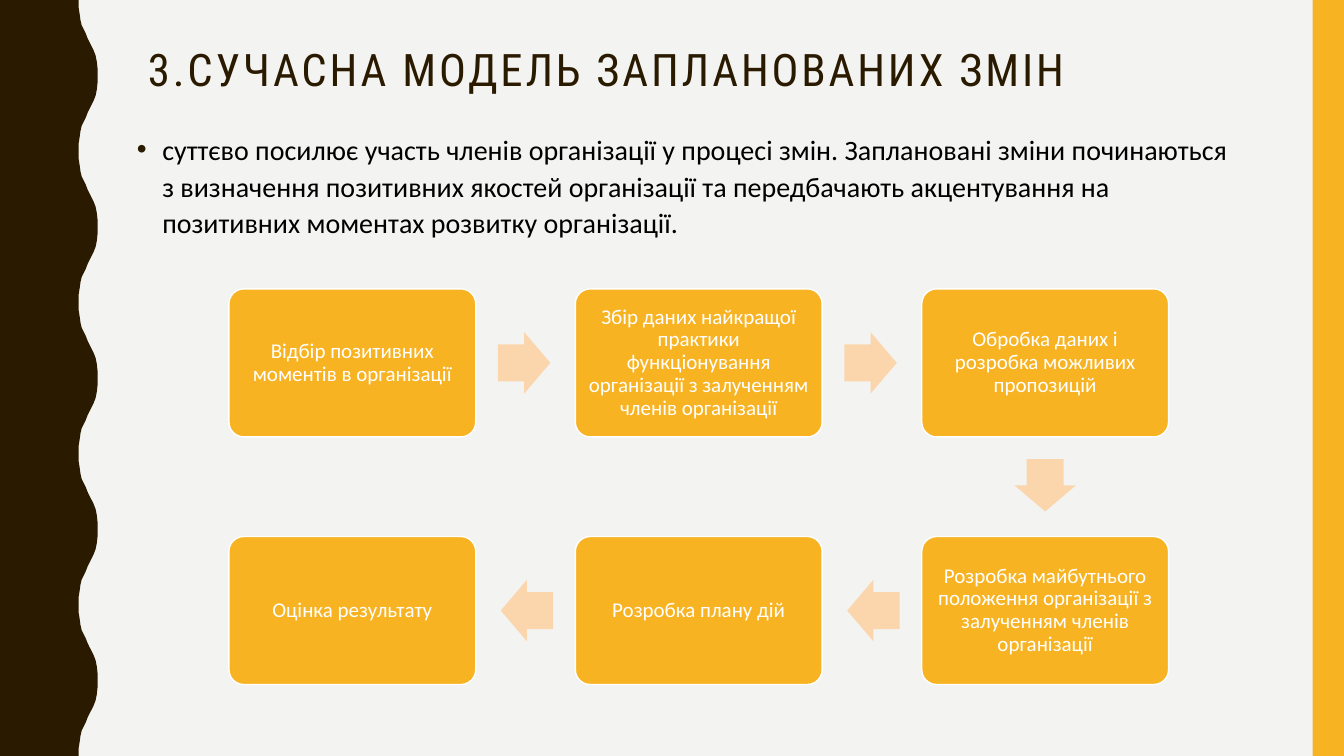
from dataclasses import dataclass

from lxml.etree import SubElement
from pptx import Presentation
from pptx.dml.color import RGBColor
from pptx.enum.shapes import MSO_SHAPE
from pptx.enum.text import MSO_ANCHOR, PP_ALIGN
from pptx.oxml.ns import qn
from pptx.util import Cm, Pt


@dataclass(frozen=True)
class Theme:
    background: str = "F3F3F2"
    dark: str = "2A1A00"
    accent: str = "F8B323"
    arrow: str = "FBD6AC"
    white: str = "FFFFFF"
    black: str = "000000"
    title_font: str = "Roboto Condensed"
    body_font: str = "Calibri"
    title_size: int = 32
    body_size: int = 20
    step_size: int = 15


SLIDE_WIDTH, SLIDE_HEIGHT = 33.87, 19.05
STEP_WIDTH, STEP_HEIGHT = 6.22, 3.73
STEP_LEFT, STEP_TOP = 5.77, 7.28
COLUMN_PITCH, ROW_PITCH = 8.73, 6.24
ARROW_LENGTH, ARROW_WIDTH, ARROW_GAP = 1.32, 1.55, 0.56
WAVE_PERIOD, WAVE_COUNT = 3.81, 5
HALF_WAVE = [
    (1.98, 0), (1.98, 0.18), (2.01, 0.36), (2.03, 0.51), (2.06, 0.64),
    (2.11, 0.74), (2.16, 0.84), (2.21, 0.97), (2.26, 1.07), (2.31, 1.17),
    (2.36, 1.27), (2.41, 1.4), (2.44, 1.55), (2.46, 1.73), (2.46, 1.9),
]

TITLE = "3.СУЧАСНА МОДЕЛЬ ЗАПЛАНОВАНИХ ЗМІН"
BODY = (
    "суттєво посилює участь членів організації у процесі змін. "
    "Заплановані зміни починаються з визначення позитивних якостей організації "
    "та передбачають акцентування на позитивних моментах розвитку організації."
)
STEPS = [
    ("Відбір позитивних моментів в організації", 0, 0),
    ("Збір даних найкращої практики функціонування організації "
     "з залученням членів організації", 1, 0),
    ("Обробка даних і розробка можливих пропозицій", 2, 0),
    ("Розробка майбутнього положення організації "
     "з залученням членів організації", 2, 1),
    ("Розробка плану дій", 1, 1),
    ("Оцінка результату", 0, 1),
]


class SlideBuilder:
    def __init__(self, slide, theme):
        self.slide = slide
        self.theme = theme
        self.paint(slide.background.fill, theme.background)

    def paint(self, fill, color):
        fill.solid()
        fill.fore_color.rgb = RGBColor.from_string(color)

    def finish(self, shape, color, line=None):
        shape.shadow.inherit = False
        self.paint(shape.fill, color)
        if line:
            self.paint(shape.line.fill, line)
            shape.line.width = Pt(1)
        else:
            shape.line.fill.background()
        return shape

    def shape(self, kind, left, top, width, height, color, line=None):
        shape = self.slide.shapes.add_shape(
            kind, Cm(left), Cm(top), Cm(width), Cm(height))
        return self.finish(shape, color, line)

    def wave(self):
        mirrored = [(x, WAVE_PERIOD - y) for x, y in reversed(HALF_WAVE[1:-1])]
        edge = [
            (Cm(x), Cm(y + index * WAVE_PERIOD))
            for index in range(WAVE_COUNT)
            for x, y in HALF_WAVE + mirrored
        ]
        edge += [(Cm(HALF_WAVE[0][0]), Cm(SLIDE_HEIGHT)), (0, Cm(SLIDE_HEIGHT))]
        builder = self.slide.shapes.build_freeform(0, 0)
        builder.add_line_segments(edge, close=True)
        self.finish(builder.convert_to_shape(), self.theme.dark)

    def add_text(self, frame, text, font, size, color, line_spacing):
        frame.word_wrap = True
        para = frame.paragraphs[0]
        para.line_spacing = line_spacing
        span = para.add_run()
        span.text = text
        span.font.name = font
        span.font.size = Pt(size)
        span.font.color.rgb = RGBColor.from_string(color)
        return para, span

    def text_box(self, left, top, width, height):
        box = self.slide.shapes.add_textbox(
            Cm(left), Cm(top), Cm(width), Cm(height))
        return box.text_frame

    def title(self, text):
        theme = self.theme
        frame = self.text_box(3.48, 1.07, 28.27, 4.14)
        para, span = self.add_text(
            frame, text, theme.title_font, theme.title_size, theme.dark, 0.9)
        span._r.get_or_add_rPr().set("spc", "200")

    def bullet(self, text):
        theme = self.theme
        frame = self.text_box(3.2, 3.12, 28.27, 9.98)
        para, span = self.add_text(
            frame, text, theme.body_font, theme.body_size, theme.black, 1.1)
        para.space_before = Pt(7)
        props = para._p.get_or_add_pPr()
        props.set("marL", str(Cm(0.64)))
        props.set("indent", str(Cm(-0.64)))
        color = SubElement(props, qn("a:buClr"))
        SubElement(color, qn("a:srgbClr"), val=theme.dark)
        SubElement(props, qn("a:buFont"), typeface="Arial")
        SubElement(props, qn("a:buChar"), char="•")

    def step(self, text, column, row):
        theme = self.theme
        box = self.shape(
            MSO_SHAPE.ROUNDED_RECTANGLE,
            STEP_LEFT + column * COLUMN_PITCH, STEP_TOP + row * ROW_PITCH,
            STEP_WIDTH, STEP_HEIGHT, theme.accent, theme.white)
        box.adjustments[0] = 0.1
        frame = box.text_frame
        frame.vertical_anchor = MSO_ANCHOR.MIDDLE
        frame.margin_left = frame.margin_right = Cm(0.16)
        frame.margin_top = frame.margin_bottom = Cm(0.16)
        para, span = self.add_text(
            frame, text, theme.body_font, theme.step_size, theme.white, 0.9)
        para.alignment = PP_ALIGN.CENTER

    def arrow(self, column, row, across, down):
        reach = ARROW_GAP + ARROW_LENGTH / 2
        center_x = (STEP_LEFT + column * COLUMN_PITCH + STEP_WIDTH / 2
                    + across * (STEP_WIDTH / 2 + reach))
        center_y = (STEP_TOP + row * ROW_PITCH + STEP_HEIGHT / 2
                    + down * (STEP_HEIGHT / 2 + reach))
        arrow = self.shape(
            MSO_SHAPE.RIGHT_ARROW,
            center_x - ARROW_LENGTH / 2, center_y - ARROW_WIDTH / 2,
            ARROW_LENGTH, ARROW_WIDTH, self.theme.arrow)
        arrow.adjustments[0] = 0.6
        arrow.adjustments[1] = 0.5
        arrow.rotation = 90 if down else 90 * (1 - across)


def main():
    deck = Presentation()
    deck.slide_width, deck.slide_height = Cm(SLIDE_WIDTH), Cm(SLIDE_HEIGHT)
    theme = Theme()
    page = SlideBuilder(deck.slides.add_slide(deck.slide_layouts[6]), theme)
    page.wave()
    page.shape(MSO_SHAPE.RECTANGLE, 33.08, 0, 0.79, SLIDE_HEIGHT, theme.accent)
    page.title(TITLE)
    page.bullet(BODY)
    for step in STEPS:
        page.step(*step)
    for (_, column, row), (_, next_column, next_row) in zip(STEPS, STEPS[1:]):
        page.arrow(column, row, next_column - column, next_row - row)
    deck.save("out.pptx")


if __name__ == "__main__":
    main()
